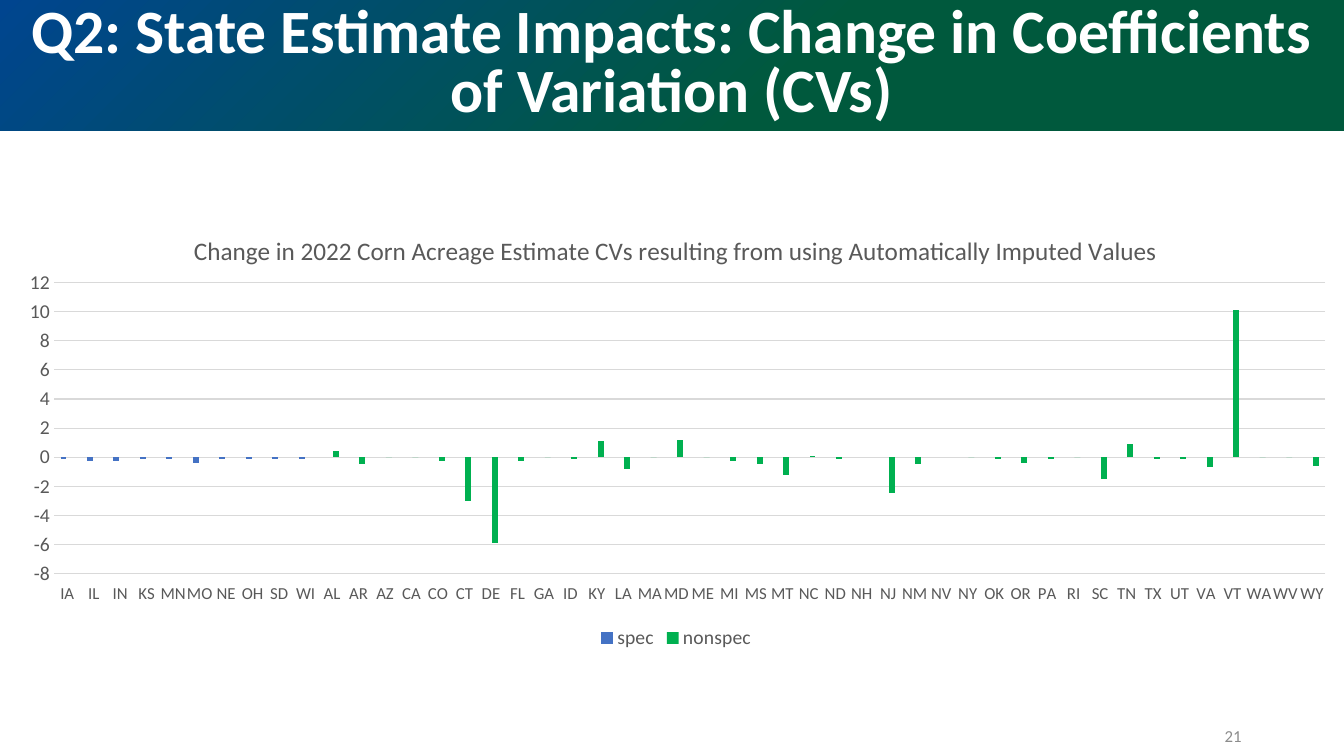
from lxml import etree
from pptx import Presentation
from pptx.chart.data import CategoryChartData
from pptx.dml.color import RGBColor
from pptx.enum.chart import XL_CHART_TYPE, XL_LEGEND_POSITION, XL_TICK_LABEL_POSITION, XL_TICK_MARK
from pptx.enum.shapes import MSO_SHAPE
from pptx.enum.text import MSO_ANCHOR, PP_ALIGN
from pptx.oxml import parse_xml
from pptx.oxml.ns import nsdecls, qn
from pptx.util import Pt

COLUMN = XL_CHART_TYPE.COLUMN_CLUSTERED
BOTTOM = XL_LEGEND_POSITION.BOTTOM
LOW = XL_TICK_LABEL_POSITION.LOW
NO_TICK = XL_TICK_MARK.NONE
RECT = MSO_SHAPE.RECTANGLE
MIDDLE = MSO_ANCHOR.MIDDLE
CENTER, RIGHT = PP_ALIGN.CENTER, PP_ALIGN.RIGHT

FONT = "Calibri"
WHITE = RGBColor(0xFF, 0xFF, 0xFF)
NAVY = RGBColor(0x00, 0x45, 0x8F)
FOREST = RGBColor(0x00, 0x59, 0x3D)
BLUE = RGBColor(0x44, 0x72, 0xC4)
GREEN = RGBColor(0x00, 0xB0, 0x50)
TEXT_GRAY = RGBColor(0x59, 0x59, 0x59)
PAGE_GRAY = RGBColor(0x8C, 0x8C, 0x8C)
GRID_GRAY = RGBColor(0xD9, 0xD9, 0xD9)

SPEC = {"IA": -0.1, "IL": -0.3, "IN": -0.3, "KS": -0.1, "MN": -0.1,
        "MO": -0.4, "NE": -0.1, "OH": -0.1, "SD": -0.1, "WI": -0.1}
NONSPEC = {"AL": 0.4, "AR": -0.5, "AZ": 0, "CA": 0, "CO": -0.3, "CT": -3,
           "DE": -5.9, "FL": -0.3, "GA": 0, "ID": -0.1, "KY": 1.1, "LA": -0.8,
           "MA": 0, "MD": 1.2, "ME": 0, "MI": -0.3, "MS": -0.5, "MT": -1.2,
           "NC": 0.1, "ND": -0.1, "NH": None, "NJ": -2.5, "NM": -0.5, "NV": None,
           "NY": 0, "OK": -0.1, "OR": -0.4, "PA": -0.1, "RI": 0, "SC": -1.5,
           "TN": 0.9, "TX": -0.1, "UT": -0.1, "VA": -0.7, "VT": 10.1, "WA": 0,
           "WV": 0, "WY": -0.6}


def write(tf, text, size, color, bold=False, align=CENTER, spacing=None):
    p = tf.paragraphs[0]
    p.alignment = align
    p.line_spacing = spacing
    r = p.add_run()
    r.text = text
    r.font.name = FONT
    r.font.size = Pt(size)
    r.font.bold = bold
    r.font.color.rgb = color


def place(parent, before, **layout):
    old = parent.find(qn("c:layout"))
    if old is not None:
        parent.remove(old)
    el = parse_xml(f"<c:layout {nsdecls('c')}><c:manualLayout/></c:layout>")
    for tag, val in layout.items():
        etree.SubElement(el[0], qn(f"c:{tag}")).set("val", str(val))
    parent.find(qn(before)).addprevious(el)


prs = Presentation()
prs.slide_width, prs.slide_height = Pt(960), Pt(540)
s = prs.slides.add_slide(prs.slide_layouts[6])

page = s.shapes.add_textbox(Pt(678), Pt(511), Pt(216), Pt(28.8))
tf = page.text_frame
tf.word_wrap = True
tf.vertical_anchor = MIDDLE
write(tf, "21", 12, PAGE_GRAY, align=RIGHT)

data = CategoryChartData()
data.categories = [*SPEC, *NONSPEC]
data.add_series("spec", [*SPEC.values()] + [None] * len(NONSPEC))
data.add_series("nonspec", [None] * len(SPEC) + [*NONSPEC.values()])
chart = s.shapes.add_chart(COLUMN, Pt(0), Pt(147.6), Pt(966), Pt(319.7), data).chart
chart.font.name = FONT
chart.font.size = Pt(12)

write(chart.chart_title.text_frame,
      "Change in 2022 Corn Acreage Estimate CVs resulting from using Automatically Imputed Values",
      18, TEXT_GRAY)
chart.chart_title.include_in_layout = False
title = chart.chart_title._element
place(title, "c:overlay", xMode="edge", yMode="edge", x=0.14, y=0.05)
plot_area = title.getparent().find(qn("c:plotArea"))
place(plot_area, "c:barChart", layoutTarget="inner", xMode="edge", yMode="edge",
      x=0.04, y=0.17, w=0.94, h=0.65)

chart.has_legend = True
chart.legend.position = BOTTOM
chart.legend.include_in_layout = False

cat, val = chart.category_axis, chart.value_axis
for item, size in ((cat.tick_labels, 12), (val.tick_labels, 14), (chart.legend, 14)):
    item.font.name = FONT
    item.font.size = Pt(size)
    item.font.color.rgb = TEXT_GRAY
for axis in (cat, val):
    axis.major_tick_mark = axis.minor_tick_mark = NO_TICK
cat.tick_label_position = LOW
val.minimum_scale, val.maximum_scale, val.major_unit = -8, 12, 2
val.format.line.fill.background()
for line in (cat.format.line, val.major_gridlines.format.line):
    line.color.rgb = GRID_GRAY
    line.width = Pt(0.75)

plot = chart.plots[0]
plot.gap_width, plot.overlap = 219, -27
plot.vary_by_categories = False
for series, color in zip(plot.series, (BLUE, GREEN)):
    series.invert_if_negative = False
    series.format.fill.solid()
    series.format.fill.fore_color.rgb = color

banner = s.shapes.add_shape(RECT, Pt(0), Pt(0), Pt(960), Pt(93.6))
banner.shadow.inherit = False
banner.line.fill.background()
banner.fill.gradient()
for stop, color, pos in zip(banner.fill.gradient_stops, (NAVY, FOREST), (0, 0.59)):
    stop.color.rgb = color
    stop.position = pos
grad = banner._element.spPr.find(qn("a:gradFill"))
grad.replace(grad.find(qn("a:lin")), parse_xml(
    f'<a:path {nsdecls("a")} path="circle"><a:fillToRect r="100000" b="100000"/></a:path>'))
tf = banner.text_frame
tf.word_wrap = True
tf.vertical_anchor = MIDDLE
write(tf, "Q2: State Estimate Impacts: Change in Coefficients of Variation (CVs)",
      44, WHITE, bold=True, spacing=0.8)

prs.save("out.pptx")
